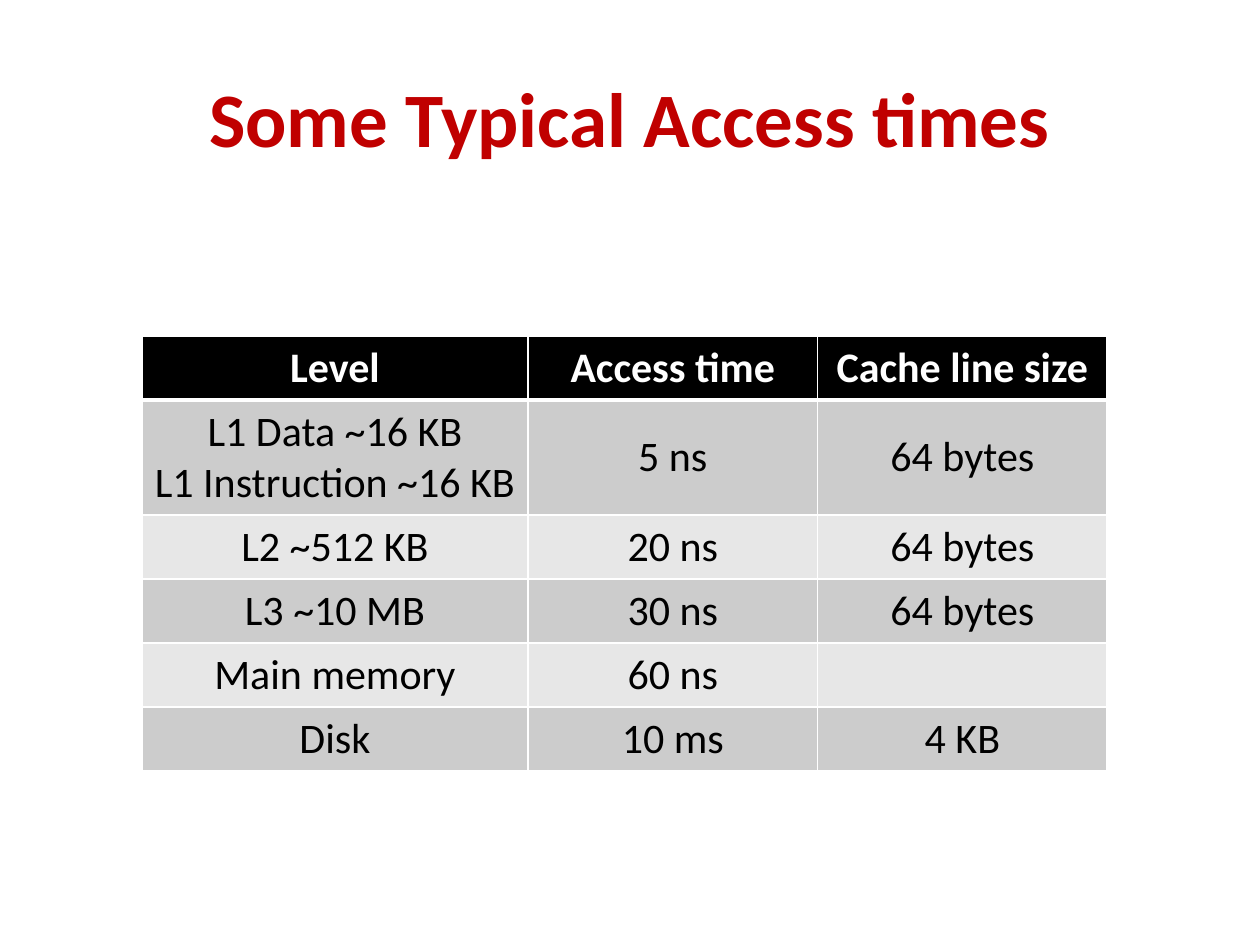
from lxml import etree
from pptx import Presentation
from pptx import util as u
from pptx.dml.color import RGBColor
from pptx.enum import text
from pptx.oxml.ns import qn

RED = RGBColor(0xC0, 0x00, 0x00)
BLACK = RGBColor(0x00, 0x00, 0x00)
WHITE = RGBColor(0xFF, 0xFF, 0xFF)
DARK_BAND = RGBColor(0xCC, 0xCC, 0xCC)
LIGHT_BAND = RGBColor(0xE7, 0xE7, 0xE7)
FONT = "Calibri"

ROWS = [
    ("Level", "Access time", "Cache line size"),
    ("L1 Data ~16 KB\nL1 Instruction ~16 KB", "5 ns", "64 bytes"),
    ("L2 ~512 KB", "20 ns", "64 bytes"),
    ("L3 ~10 MB", "30 ns", "64 bytes"),
    ("Main memory", "60 ns", ""),
    ("Disk", "10 ms", "4 KB"),
]
COL_SHARES = (0.4, 0.3, 0.3)
ROW_HEIGHT = u.Cm(1.29)
LINE_HEIGHT = u.Cm(1.03)


def write(tf, content, size, color, bold):
    tf.text = content
    for p in tf.paragraphs:
        p.alignment = text.PP_ALIGN.CENTER
        p.font.size = u.Pt(size)
        for r in p.runs:
            r.font.name = FONT
            r.font.size = u.Pt(size)
            r.font.bold = bold
            r.font.color.rgb = color


def set_borders(cell, **widths):
    """Draw white cell borders; widths are points keyed by L, R, T and B."""
    tc_pr = cell._tc.get_or_add_tcPr()
    for side in "LRTB":
        ln = etree.SubElement(tc_pr, qn(f"a:ln{side}"), w=str(u.Pt(widths.get(side, 1))))
        fill = etree.SubElement(ln, qn("a:solidFill"))
        etree.SubElement(fill, qn("a:srgbClr"), val=str(WHITE))


def add_title(s, left, top, width, height):
    tf = s.shapes.add_textbox(left, top, width, height).text_frame
    tf.word_wrap = True
    tf.vertical_anchor = text.MSO_ANCHOR.MIDDLE
    write(tf, "Some Typical Access times", 44, RED, True)


def add_access_table(s, left, top, width):
    heights = [ROW_HEIGHT + LINE_HEIGHT * row[0].count("\n") for row in ROWS]
    table = s.shapes.add_table(len(ROWS), len(COL_SHARES), left, top, width, sum(heights)).table
    for column, share in zip(table.columns, COL_SHARES):
        column.width = int(width * share)
    for i, row in enumerate(ROWS):
        table.rows[i].height = heights[i]
        header = i == 0
        band = BLACK if header else DARK_BAND if i % 2 else LIGHT_BAND
        for j, content in enumerate(row):
            cell = table.cell(i, j)
            set_borders(cell, T=3 if i == 1 else 1, B=3 if header else 1)
            cell.fill.solid()
            cell.fill.fore_color.rgb = band
            if j and not header:
                cell.vertical_anchor = text.MSO_ANCHOR.MIDDLE
            write(cell.text_frame, content, 24, WHITE if header else BLACK, header)


def main():
    prs = Presentation()
    prs.slide_width, prs.slide_height = u.Cm(25.4), u.Cm(19.05)
    s = prs.slides.add_slide(prs.slide_layouts[6])
    add_title(s, u.Cm(1.27), u.Cm(0.76), u.Cm(22.86), u.Cm(3.18))
    add_access_table(s, u.Cm(2.86), u.Cm(6.77), u.Cm(19.46))
    prs.save("out.pptx")


if __name__ == "__main__":
    main()
